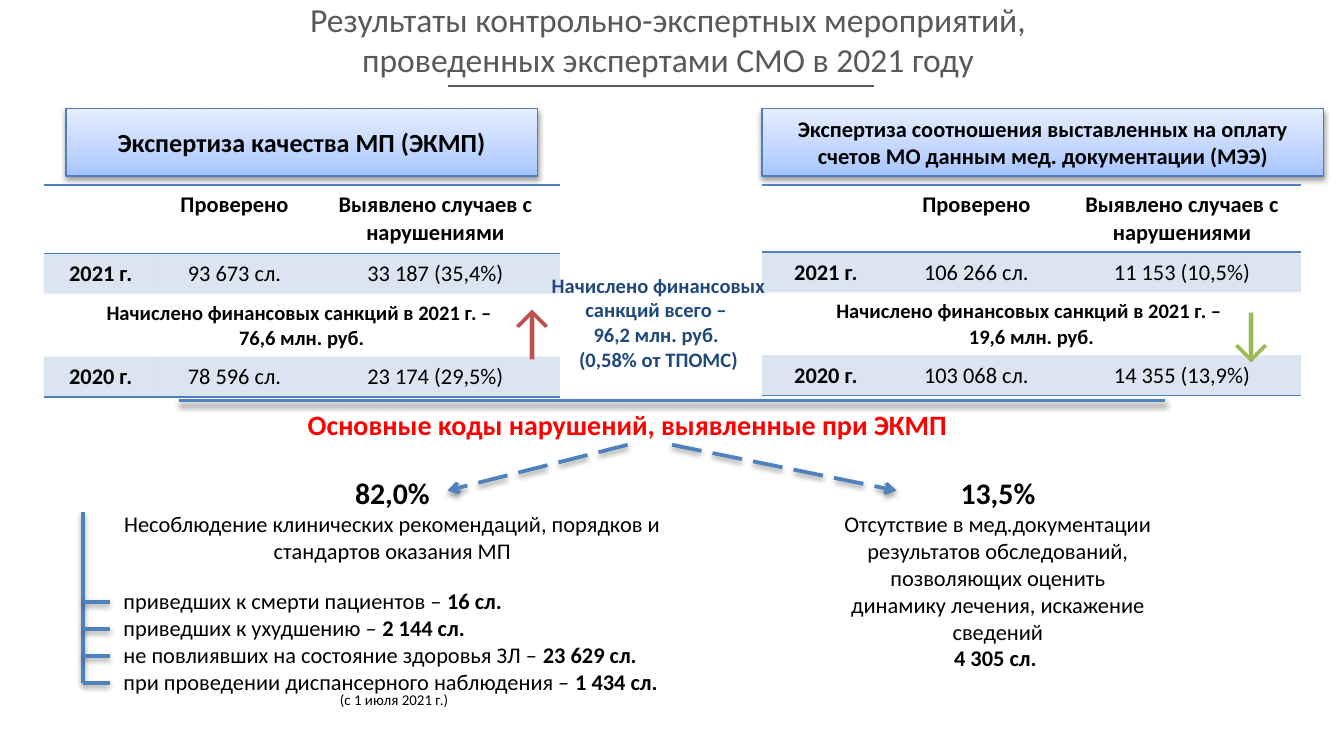
import pptx
import pptx.util
import pptx.dml.color
import pptx.enum.dml
import pptx.enum.shapes
import pptx.enum.text
import pptx.oxml
import pptx.oxml.ns

FONT = "Calibri"
BLUE, EDGE, BLACK = "4F81BD", "4B7EBC", "000000"
NS = pptx.oxml.ns.nsdecls("a")
MID = pptx.enum.text.MSO_ANCHOR.MIDDLE
LEFT, MIDST = pptx.enum.text.PP_ALIGN.LEFT, pptx.enum.text.PP_ALIGN.CENTER


def grid(n):
    return pptx.util.Inches(n / 10)


def tint(text):
    return pptx.dml.color.RGBColor.from_string(text)


def node(xml):
    head, tail = xml.split(" ", 1)
    return pptx.oxml.parse_xml(f"{head} {NS} {tail}")


def shade(item, on=True):
    cast = ('<a:outerShdw blurRad="39370" dist="20320" dir="5400000" rotWithShape="0">'
            '<a:srgbClr val="000000"><a:alpha val="38000"/></a:srgbClr></a:outerShdw>')
    item._element.spPr.append(node(f"<a:effectLst >{cast if on else ''}</a:effectLst>"))


def write(frame, paras, size, color=BLACK, align=MIDST):
    for i, runs in enumerate(paras):
        para = frame.paragraphs[0] if i == 0 else frame.add_paragraph()
        para.alignment = align
        for text, bold, *own in runs:
            if text == "\n":
                para.add_line_break()
                continue
            run = para.add_run()
            run.text = text
            font = run.font
            font.name, font.bold = FONT, bold
            font.size = pptx.util.Pt(own[0] if own else size)
            font.color.rgb = tint(color)


def label(slide, spot, paras, size, color=BLACK, align=MIDST, wrap=True):
    frame = slide.shapes.add_textbox(*map(grid, spot)).text_frame
    frame.word_wrap = wrap
    write(frame, paras, size, color, align)
    return frame


def stroke(shapes, start, end, color=BLUE, width=2, cast=True, arrow=False):
    kind = pptx.enum.shapes.MSO_CONNECTOR.STRAIGHT
    line = shapes.add_connector(kind, *map(grid, start + end))
    line.line.color.rgb = tint(color)
    line.line.width = pptx.util.Pt(width)
    if arrow:
        line.line.dash_style = pptx.enum.dml.MSO_LINE.LONG_DASH
        line.line._ln.append(node('<a:tailEnd type="arrow"/>'))
    shade(line, cast)


def banner(slide, spot, text, size):
    kind = pptx.enum.shapes.MSO_SHAPE.RECTANGLE
    rect = slide.shapes.add_shape(kind, *map(grid, spot))
    rect.fill.gradient()
    rect.fill.gradient_angle = 90
    stops = rect._element.spPr.find(".//" + pptx.oxml.ns.qn("a:gsLst"))
    for stop in list(stops):
        stops.remove(stop)
    for pos, color in ((0, "A4C4FF"), (35, "BFD4FF"), (100, "E6EEFF")):
        stops.append(node(f'<a:gs pos="{pos * 1000}"><a:srgbClr val="{color}"/></a:gs>'))
    rect.line.color.rgb = tint(EDGE)
    rect.line.width = pptx.util.Pt(0.75)
    shade(rect)
    rect.text_frame.word_wrap = True
    rect.text_frame.vertical_anchor = MID
    write(rect.text_frame, [[(text, True)]], size)


def border(cell, sides):
    props = cell._tc.get_or_add_tcPr()
    for side in "LRTB":
        if side in sides:
            xml = (f'<a:ln{side} w="12700"><a:solidFill><a:srgbClr val="{BLUE}"/>'
                   f'</a:solidFill></a:ln{side}>')
        else:
            xml = f'<a:ln{side} w="0"><a:noFill/></a:ln{side}>'
        props.append(node(xml))


def band(cell):
    cell.fill.solid()
    cell.fill.fore_color.rgb = tint(BLUE)
    solid = cell._tc.tcPr.find(pptx.oxml.ns.qn("a:solidFill"))
    solid[0].append(node('<a:alpha val="20000"/>'))


def sheet(slide, spot, cols, rows, now, fine, past):
    frame = slide.shapes.add_table(4, 3, *map(grid, spot))
    table = frame.table
    table.first_row = table.horz_banding = False
    for col, size in zip(table.columns, cols):
        col.width = grid(size)
    for row, size in zip(table.rows, rows):
        row.height = grid(size)
    frame.height = grid(spot[3])
    sides = ("TB", "T", "", "B")
    heads = ("", "Проверено", "Выявлено случаев с нарушениями")
    for r, texts in enumerate((heads, now, ("", "", ""), past)):
        for c, text in enumerate(texts):
            cell = table.cell(r, c)
            border(cell, sides[r])
            if r % 2:
                band(cell)
            else:
                cell.fill.background()
            if text:
                write(cell.text_frame, [[(text, r == 0 or c == 0)]], 12)
    table.cell(2, 0).merge(table.cell(2, 2))
    total = [[("Начислено финансовых санкций в 2021 г. – ", True)], [(fine, True)]]
    write(table.cell(2, 0).text_frame, total, 11)


def rail(slide):
    group = slide.shapes.add_group_shape().shapes
    stroke(group, (6.2, 38.1), (6.2, 50.8))
    for i in range(4):
        stroke(group, (6.2, 44.8 + 2 * i), (8.2, 44.8 + 2 * i))


def main():
    deck = pptx.Presentation()
    deck.slide_width, deck.slide_height = grid(100), grid(56.25)
    slide = deck.slides.add_slide(deck.slide_layouts[6])

    title = label(slide, (1.6, -0.3, 96.8, 6.4), [[
        ("Результаты контрольно-экспертных мероприятий, ", False), ("\n", False),
        ("проведенных экспертами СМО в 2021 году ", False)]], 18, "595959")
    title.vertical_anchor = MID
    stroke(slide.shapes, (33.3, 6.4), (65, 6.4), "595959", 1, False)

    banner(slide, (4.9, 8.1, 35.1, 5), "Экспертиза качества МП (ЭКМП)", 14)
    sheet(slide, (3.25, 13.75, 38.4, 15.8), (8.5, 11.4, 18.5), (5.1, 2.7, 3.8, 2.7),
          ("2021 г.", "93 673 сл.", "33 187 (35,4%)"), "76,6 млн. руб.",
          ("2020 г.", "78 596 сл.", "23 174 (29,5%)"))
    banner(slide, (56.7, 8.1, 41.8, 5), "Экспертиза соотношения выставленных на оплату "
           "счетов МО данным мед. документации (МЭЭ)", 12)
    sheet(slide, (56.7, 13.75, 40.1, 15.7), (9.5, 12.9, 17.7), (4.7, 2.8, 4.1, 2.8),
          ("2021 г.", "106 266 сл.", "11 153 (10,5%)"), "19,6 млн. руб.",
          ("2020 г.", "103 068 сл.", "14 355 (13,9%)"))

    label(slide, (13.3, 29.8, 66.8, 3.5),
          [[("Основные коды нарушений, выявленные при ЭКМП", True)]], 15, "FF0000")
    stroke(slide.shapes, (13.3, 29.8), (86.7, 29.8))
    label(slide, (61.7, 34.8, 25.1, 15.8), [
        [("13,5%", True, 16)],
        [("Отсутствие в мед.документации результатов обследований, позволяющих оценить "
          "динамику лечения, искажение сведений", False)],
        [("4 305 сл. ", True)]], 12)
    label(slide, (6.7, 34.8, 45, 7.7), [
        [("82,0%", True, 16)],
        [("Несоблюдение клинических рекомендаций, порядков и стандартов оказания МП", False)]], 12)
    stroke(slide.shapes, (46.7, 33.1), (33.3, 36.5), arrow=True)
    stroke(slide.shapes, (50, 33.1), (66.7, 36.5), arrow=True)

    cases = (("приведших к смерти пациентов – ", "16 сл."),
             ("приведших к ухудшению – ", "2 144 сл."),
             ("не повлиявших на состояние здоровья ЗЛ – ", "23 629 сл."),
             ("при проведении диспансерного наблюдения – ", "1 434 сл."))
    paras = [[(text, False), (count, True)] for text, count in cases]
    paras.append([("(с 1 июля 2021 г.)", False, 8)])
    last = label(slide, (8.2, 43.2, 45.1, 10.1), paras, 12, align=LEFT).paragraphs[-1]
    last.line_spacing = 0.5
    last.space_before = pptx.util.Pt(2)
    last._p.get_or_add_pPr().set("marL", str(grid(16.1)))
    rail(slide)

    for left, sign, color in ((36.6, "↑", "C0504D"), (90.1, "↓", "9BBB59")):
        label(slide, (left, 21.4, 4.5, 6.4), [[(sign, False)]], 32, color, LEFT, False)
    label(slide, (40, 19.8, 18, 8.4), [
        [("Начислено финансовых санкций всего – ", True)],
        [("96,2 млн. руб. ", True)],
        [("(0,58% от ТПОМС)", True)]], 11, "1F497D")
    deck.save("out.pptx")


if __name__ == "__main__":
    main()
